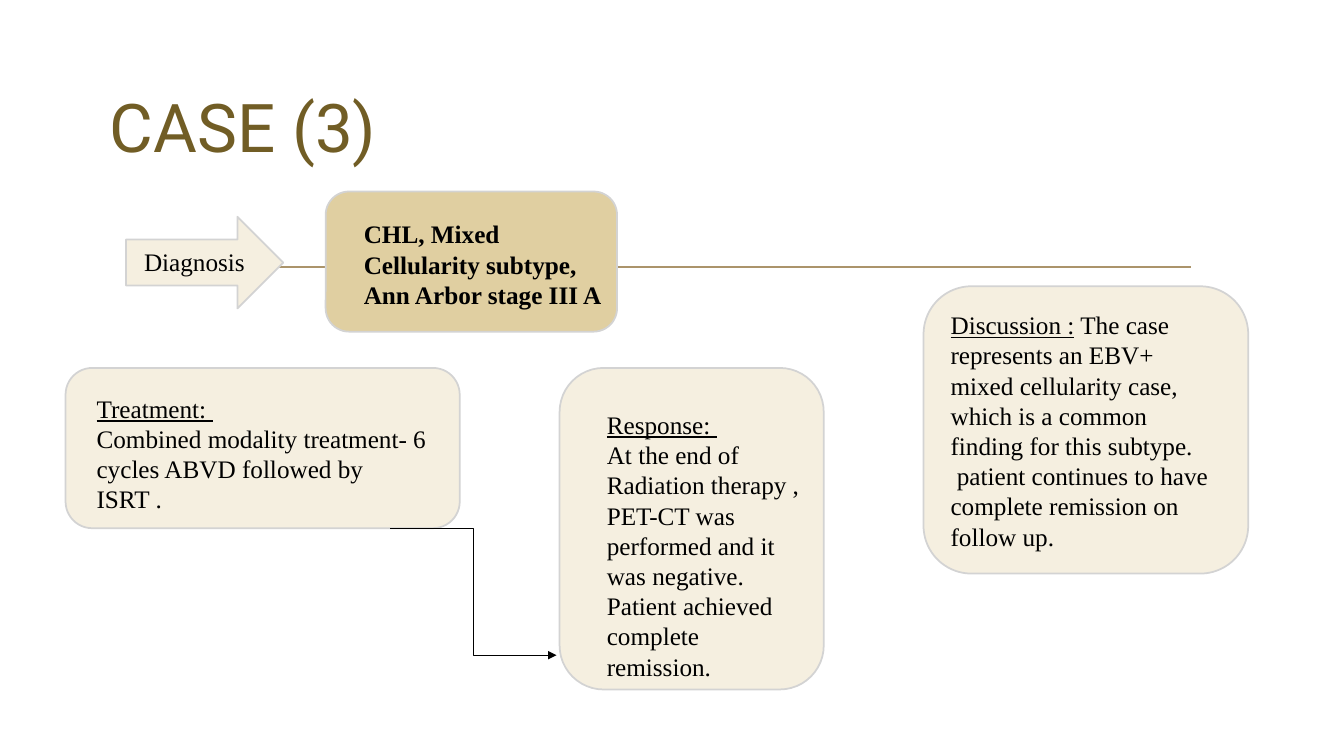
from lxml.etree import SubElement
from pptx import Presentation
from pptx.dml.color import RGBColor
from pptx.enum.shapes import MSO_CONNECTOR as LINK, MSO_SHAPE as SHAPE
from pptx.enum.text import MSO_ANCHOR, PP_ALIGN
from pptx.oxml.ns import qn
from pptx.util import Inches, Pt

CREAM, SAND, BORDER = "F5EFE0", "E0CFA1", "D3D3D3"
RULE, BROWN, BLACK = "AB946B", "715D25", "000000"


def color(hex_code):
    return RGBColor.from_string(hex_code)


def add_run(paragraph, text, size=18, font="Times New Roman", ink=BLACK,
            bold=False, underline=False):
    run = paragraph.add_run()
    run.text = text
    run.font.name = font
    run.font.size = Pt(size)
    run.font.color.rgb = color(ink)
    run.font.bold = bold
    run.font.underline = underline


def add_title(slide, text, box):
    title = slide.shapes.title
    title.left, title.top, title.width, title.height = map(Inches, box)
    frame = title.text_frame
    frame.word_wrap = False
    frame.vertical_anchor = MSO_ANCHOR.TOP
    paragraph = frame.paragraphs[0]
    paragraph.alignment = PP_ALIGN.JUSTIFY
    add_run(paragraph, text, size=48, font="Roboto", ink=BROWN)


def add_panel(slide, kind, box, fill=CREAM):
    panel = slide.shapes.add_shape(kind, *map(Inches, box))
    panel.shadow.inherit = False
    panel.fill.solid()
    panel.fill.fore_color.rgb = color(fill)
    panel.line.color.rgb = color(BORDER)
    panel.line.width = Pt(1.25)


def add_text(slide, box, paragraphs):
    """Each paragraph is a list of (text, style) runs."""
    frame = slide.shapes.add_textbox(*map(Inches, box)).text_frame
    frame.word_wrap = True
    for index, runs in enumerate(paragraphs):
        paragraph = frame.add_paragraph() if index else frame.paragraphs[0]
        for text, style in runs:
            add_run(paragraph, text, **style)


def add_line(slide, kind, start, end, ink, width, arrow=False):
    line = slide.shapes.add_connector(kind, *map(Inches, start + end))
    line.line.color.rgb = color(ink)
    line.line.width = Pt(width)
    properties = line._element.spPr
    if arrow:
        SubElement(properties.find(qn("a:ln")), qn("a:tailEnd"), type="triangle")
    SubElement(properties, qn("a:effectLst"))


def main():
    deck = Presentation()
    deck.slide_width, deck.slide_height = Inches(13.33), Inches(7.5)
    slide = deck.slides.add_slide(deck.slide_layouts[5])
    plain, bold, heading = {}, {"bold": True}, {"underline": True}

    # Title and rule
    add_title(slide, "CASE (3)", (0.99, 0.8, 3.07, 0.91))
    add_line(slide, LINK.STRAIGHT, (1.53, 2.65), (11.81, 2.65), RULE, 1.25)

    # Diagnosis
    add_panel(slide, SHAPE.ROUNDED_RECTANGLE, (3.23, 1.9, 2.89, 1.39), SAND)
    add_panel(slide, SHAPE.RIGHT_ARROW, (1.25, 2.15, 1.56, 0.91))
    add_text(slide, (1.33, 2.39, 1.31, 0.4), [[("Diagnosis", plain)]])
    add_text(slide, (3.51, 2.12, 2.61, 1.01), [
        [("CHL, Mixed Cellularity subtype, Ann Arbor stage III A", bold)]])

    # Treatment, response and discussion: panel box, text box, paragraphs
    cards = [
        ((0.65, 3.65, 3.91, 1.59), (0.86, 3.85, 3.53, 1.01), [
            [("Treatment: ", heading)],
            [("Combined modality treatment- 6 cycles ABVD followed by ISRT .", plain)]]),
        ((5.55, 3.65, 2.62, 3.19), (5.92, 4.01, 2.19, 2.83), [
            [("Response: ", heading)],
            [("At the end of Radiation therapy , PET-CT was performed and it "
              "was negative.", plain)],
            [("Patient achieved complete remission.", plain)]]),
        ((9.16, 2.84, 3.22, 2.85), (9.33, 3.02, 2.87, 2.83), [
            [("Discussion :", heading),
             (" The case represents an EBV+ mixed cellularity case, which is "
              "a common finding for this subtype.", plain)],
            [(" patient continues to have complete remission on follow up.", plain)]]),
    ]
    for panel_box, text_box, paragraphs in cards:
        add_panel(slide, SHAPE.ROUNDED_RECTANGLE, panel_box)
        add_text(slide, text_box, paragraphs)

    # Arrow from treatment to response
    add_line(slide, LINK.ELBOW, (3.87, 5.24), (5.52, 6.5), BLACK, 0.75, arrow=True)

    deck.save("out.pptx")


if __name__ == "__main__":
    main()
